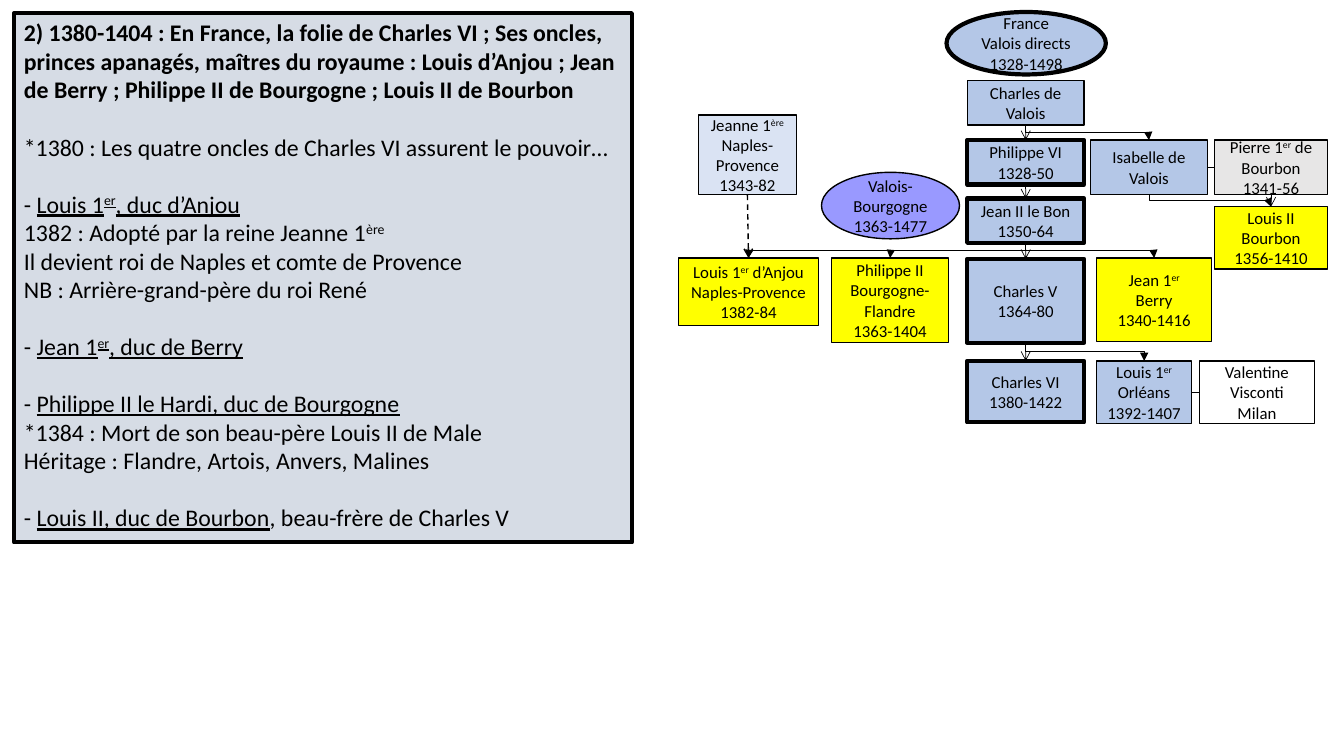
from lxml import etree
from pptx import Presentation
from pptx.dml.color import RGBColor
from pptx.enum.dml import MSO_LINE
from pptx.enum.shapes import MSO_CONNECTOR, MSO_SHAPE
from pptx.enum.text import MSO_ANCHOR, PP_ALIGN
from pptx.oxml.ns import qn
from pptx.util import Pt

RECTANGLE, OVAL = MSO_SHAPE.RECTANGLE, MSO_SHAPE.OVAL
STRAIGHT, ELBOW = MSO_CONNECTOR.STRAIGHT, MSO_CONNECTOR.ELBOW
TOP_ANCHOR, MIDDLE_ANCHOR = MSO_ANCHOR.TOP, MSO_ANCHOR.MIDDLE
LEFT_ALIGN, CENTER_ALIGN = PP_ALIGN.LEFT, PP_ALIGN.CENTER
DASH = MSO_LINE.DASH
TOP, LEFT, BOTTOM, RIGHT = range(4)

COLORS = {
    "ink": "000000",
    "panel": "D6DCE5",
    "valois": "B4C7E7",
    "uncle": "FFFF00",
    "naples": "DAE3F3",
    "burgundy": "9999FF",
    "bourbon": "E7E6E6",
}
FONT = "Calibri"
THIN, NORMAL, THICK = 0.5, 1, 3
LINE_PITCH = 20.4


class FamilyTreeSlide:
    def __init__(self, presentation):
        self.slide = presentation.slides.add_slide(presentation.slide_layouts[6])

    def color(self, name):
        return RGBColor.from_string(COLORS[name])

    def add_runs(self, paragraph, runs, size):
        """Each run is a string or (text, marks): b bold, u underline, ^ superscript."""
        for item in runs:
            text, marks = (item, "") if isinstance(item, str) else item
            run = paragraph.add_run()
            run.text = text
            run.font.name = FONT
            run.font.size = Pt(size)
            run.font.color.rgb = self.color("ink")
            run.font.bold = "b" in marks
            run.font.underline = "u" in marks
            if "^" in marks:
                run.font._element.set("baseline", "30000")

    def outline(self, kind, bounds, fill, weight, anchor):
        shape = self.slide.shapes.add_shape(kind, *map(Pt, bounds))
        shape.shadow.inherit = False
        if fill:
            shape.fill.solid()
            shape.fill.fore_color.rgb = self.color(fill)
        else:
            shape.fill.background()
        shape.line.color.rgb = self.color("ink")
        shape.line.width = Pt(weight)
        shape.text_frame.word_wrap = True
        shape.text_frame.vertical_anchor = anchor
        return shape

    def box(self, bounds, lines, fill="valois", weight=NORMAL, kind=RECTANGLE):
        shape = self.outline(kind, bounds, fill, weight, MIDDLE_ANCHOR)
        frame = shape.text_frame
        for index, line in enumerate(lines):
            paragraph = frame.add_paragraph() if index else frame.paragraphs[0]
            paragraph.alignment = CENTER_ALIGN
            self.add_runs(paragraph, [line] if isinstance(line, str) else line, 12)
        return shape

    def text_panel(self, bounds, groups):
        frame = self.outline(RECTANGLE, bounds, "panel", THICK, TOP_ANCHOR).text_frame
        for group_index, group in enumerate(groups):
            for line_index, runs in enumerate(group):
                first = group_index == line_index == 0
                paragraph = frame.paragraphs[0] if first else frame.add_paragraph()
                paragraph.alignment = LEFT_ALIGN
                paragraph.line_spacing = Pt(LINE_PITCH)
                if group_index and not line_index:
                    paragraph.space_before = Pt(LINE_PITCH)
                self.add_runs(paragraph, runs, 17)

    def connect(self, kind, start, end, sides, arrow, weight=THIN):
        connector = self.slide.shapes.add_connector(kind, 0, 0, 0, 0)
        connector.begin_connect(start, sides[0])
        connector.end_connect(end, sides[1])
        connector.line.color.rgb = self.color("ink")
        connector.line.width = Pt(weight)
        properties = connector._element.spPr
        if arrow:
            line = connector.line._get_or_add_ln()
            etree.SubElement(line, qn("a:tailEnd")).set("type", arrow)
        etree.SubElement(properties, qn("a:effectLst"))
        return connector

    def descent(self, parent, child):
        self.connect(STRAIGHT, parent, child, (BOTTOM, TOP), "arrow")

    def marriage(self, left, right):
        self.connect(STRAIGHT, left, right, (RIGHT, LEFT), None)

    def branch(self, parent, child):
        """Elbow that leaves downwards: a quarter turn of the default elbow."""
        connector = self.connect(ELBOW, parent, child, (BOTTOM, TOP), "triangle")
        start_x, start_y = connector.begin_x, connector.begin_y
        run, drop = connector.end_x - start_x, connector.end_y - start_y
        transform = connector._element.spPr.xfrm
        for flip in ("flipH", "flipV"):
            transform.attrib.pop(flip, None)
        connector.width, connector.height = drop, abs(run)
        connector.left = start_x + (run - drop) // 2
        connector.top = start_y + (drop - abs(run)) // 2
        transform.set("rot", "16200000" if run > 0 else "5400000")
        if run > 0:
            transform.set("flipH", "1")


def main():
    presentation = Presentation()
    presentation.slide_width, presentation.slide_height = Pt(960), Pt(540)
    tree = FamilyTreeSlide(presentation)

    # The four uncles
    tree.text_panel((10, 9.4, 441.4, 378), [
        [[("2) 1380-1404 : En France, la folie de Charles VI ; Ses oncles, "
           "princes apanagés, maîtres du royaume : Louis d’Anjou ; Jean de Berry ; "
           "Philippe II de Bourgogne ; Louis II de Bourbon", "b")]],
        [["*1380 : Les quatre oncles de Charles VI assurent le pouvoir…"]],
        [["- ", ("Louis 1", "u"), ("er", "u^"), (", duc d’Anjou", "u")],
         ["1382 : Adopté par la reine Jeanne 1", ("ère", "^")],
         ["Il devient roi de Naples et comte de Provence"],
         ["NB : Arrière-grand-père du roi René"]],
        [["- ", ("Jean 1", "u"), ("er", "u^"), (", duc de Berry", "u")]],
        [["- ", ("Philippe II le Hardi, duc de Bourgogne", "u")],
         ["*1384 : Mort de son beau-père Louis II de Male"],
         ["Héritage : Flandre, Artois, Anvers, Malines"]],
        [["- ", ("Louis II, duc de Bourbon", "u"), ", beau-frère de Charles V"]],
    ])

    # Houses
    tree.box((676.1, 8.6, 113.8, 44.6), ["France", "Valois directs", "1328-1498"],
             weight=THICK, kind=OVAL)
    tree.box((586.8, 123.1, 98.6, 47.5), ["Valois-Bourgogne", "1363-1477"],
             "burgundy", kind=OVAL)

    # Kings, in one column
    kings = [
        tree.box((690.9, top, 83.5, height), lines, weight=weight)
        for top, height, lines, weight in [
            (57.6, 31.7, ["Charles de Valois"], NORMAL),
            (100.1, 31.7, ["Philippe VI", "1328-50"], THICK),
            (141.8, 31.7, ["Jean II le Bon", "1350-64"], THICK),
            (185, 59.8, ["Charles V", "1364-80"], THICK),
            (257.8, 43.9, ["Charles VI", "1380-1422"], THICK),
        ]]
    founder, _, jean_ii, charles_v, _ = kings

    # Brothers, sisters and spouses
    er = ("er", "^")
    isabelle = tree.box((779, 100.1, 83.5, 38.9), ["Isabelle de Valois"])
    pierre = tree.box((867.6, 100.1, 80.6, 38.9),
                      [["Pierre 1", er, " de Bourbon"], "1341-56"], "bourbon")
    louis_bourbon = tree.box((867.6, 147.6, 80.6, 44.6),
                             ["Louis II", "Bourbon", "1356-1410"], "uncle")
    jeanne = tree.box((499, 82.1, 69.8, 56.9),
                      [["Jeanne 1", ("ère", "^")], "Naples-Provence", "1343-82"], "naples")
    anjou = tree.box((484.6, 184.3, 100.1, 48.2),
                     [["Louis 1", er, " d’Anjou"], "Naples-Provence", "1382-84"], "uncle")
    bourgogne = tree.box((594, 184.3, 83.5, 60.5),
                         ["Philippe II", "Bourgogne-Flandre", "1363-1404"], "uncle")
    berry = tree.box((783.4, 184.3, 82.1, 59.8),
                     [["Jean 1", er], "Berry", "1340-1416"], "uncle")
    orleans = tree.box((783.4, 257.8, 67.7, 44.6),
                       [["Louis 1", er], "Orléans", "1392-1407"])
    valentine = tree.box((856.8, 257.8, 82.1, 44.6), ["Valentine Visconti", "Milan"], None)

    # Descent, adoption and marriages
    for parent, child in [*zip(kings, kings[1:]), (pierre, louis_bourbon)]:
        tree.descent(parent, child)
    for parent, child in [(founder, isabelle), (isabelle, louis_bourbon),
                          (jean_ii, anjou), (jean_ii, bourgogne), (jean_ii, berry),
                          (charles_v, orleans)]:
        tree.branch(parent, child)
    adoption = tree.connect(STRAIGHT, jeanne, anjou, (BOTTOM, TOP), "arrow", NORMAL)
    adoption.line.dash_style = DASH
    tree.marriage(isabelle, pierre)
    tree.marriage(orleans, valentine)

    presentation.save("out.pptx")


if __name__ == "__main__":
    main()
